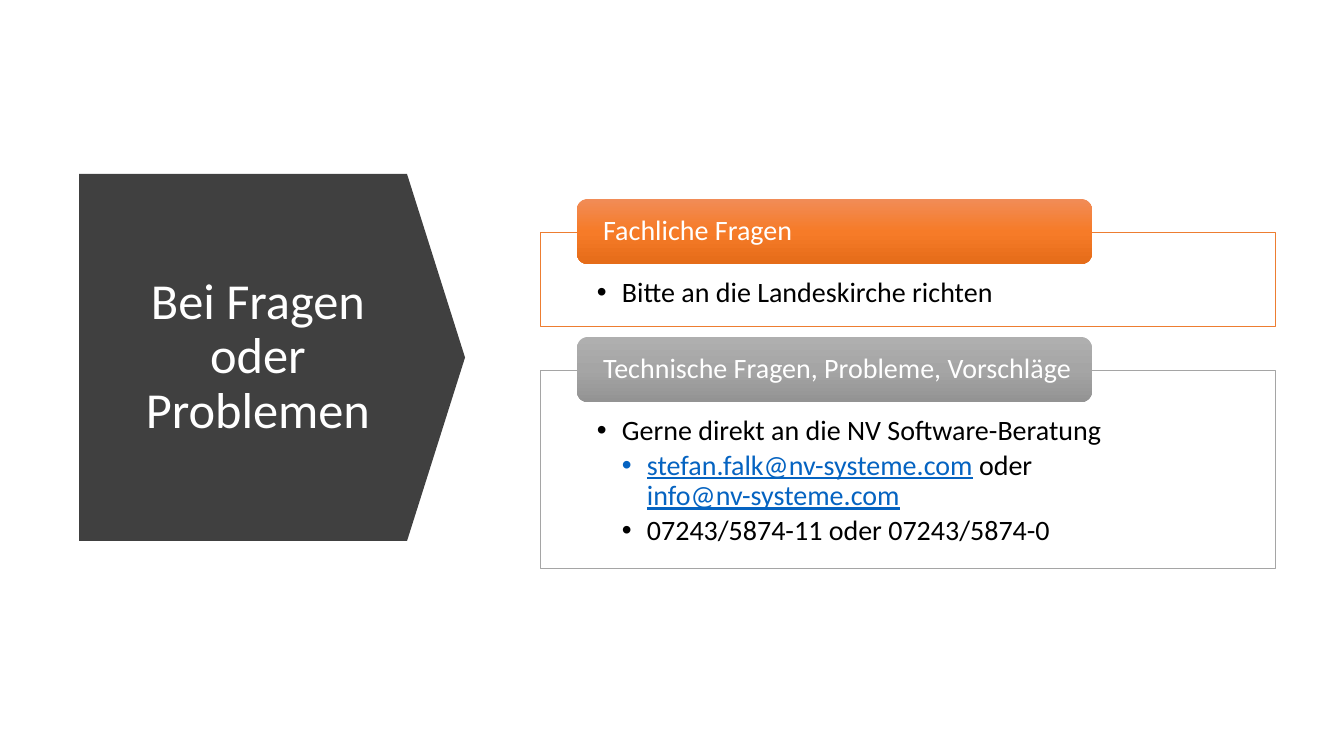
import copy

import pptx
import pptx.dml.color
import pptx.enum.shapes
import pptx.enum.text
import pptx.oxml.ns
import pptx.util
from lxml import etree

HEADING = "Bei Fragen oder Problemen"
# Each bullet is (level, runs); a run is (text, colour role).
TOPICS = [
    {
        "label": "Fachliche Fragen",
        "accent": "orange",
        "height": 94,
        "bullets": [(0, [("Bitte an die Landeskirche richten", "text")])],
    },
    {
        "label": "Technische Fragen, Probleme, Vorschläge",
        "accent": "grey",
        "height": 198,
        "bullets": [
            (0, [("Gerne direkt an die NV Software-Beratung", "text")]),
            (1, [("stefan.falk@nv-systeme.com", "link"), (" oder\n", "text"),
                 ("info@nv-systeme.com", "link")]),
            (1, [("07243/5874-11 oder 07243/5874-0", "text")]),
        ],
    },
]
THEME = {
    "font": "Calibri",
    "title_size": 36,
    "body_size": 20,
    "colors": {"text": "000000", "link": "0563C1", "light": "FFFFFF", "dark": "404040"},
    "lines": {"orange": "ED7D31", "grey": "A5A5A5"},
    "gradients": {
        "orange": ("F18C57", "F67B28", "E56C19"),
        "grey": ("AFAFAF", "A5A5A5", "939393"),
    },
}

EMU_PER_PX = 914400 / 100.8
SLIDE_SIZE = (1344, 756)
ARROW_BOX = (79, 174, 386, 367)
TITLE_BOX = (113, 217, 290, 281)
FRAME_LEFT, FRAME_WIDTH = 540, 735
TAB_LEFT, TAB_WIDTH, TAB_HEIGHT = 577, 515, 65
FIRST_TAB_TOP, TAB_RISE, TOPIC_GAP = 199, 33, 11
INDENT = 25


def px(length):
    return pptx.util.Emu(round(length * EMU_PER_PX))


def rgb(code):
    return pptx.dml.color.RGBColor.from_string(code)


def place(shape, left, top, width, height):
    shape.left, shape.top = px(left), px(top)
    shape.width, shape.height = px(width), px(height)


def write(shape, paragraphs, size=THEME["body_size"], align="LEFT", anchor="MIDDLE",
          margins=(10, 5, 10, 5), bullets=False, space_after=0):
    """Fill a shape with (level, runs) paragraphs; margins are left, top, right, bottom."""
    frame = shape.text_frame
    frame.word_wrap = True
    frame.auto_size = pptx.enum.text.MSO_AUTO_SIZE.NONE
    frame.vertical_anchor = pptx.enum.text.MSO_ANCHOR[anchor]
    (frame.margin_left, frame.margin_top,
     frame.margin_right, frame.margin_bottom) = map(px, margins)
    for index, (level, runs) in enumerate(paragraphs):
        paragraph = frame.add_paragraph() if index else frame.paragraphs[0]
        paragraph.alignment = pptx.enum.text.PP_ALIGN[align]
        paragraph.level = level
        paragraph.line_spacing = 0.9
        paragraph.space_before = pptx.util.Pt(0)
        paragraph.space_after = pptx.util.Pt(space_after)
        if bullets:
            properties = paragraph._p.get_or_add_pPr()
            properties.set("marL", str(px(INDENT * (level + 1))))
            properties.set("indent", str(px(-INDENT)))
            etree.SubElement(properties, pptx.oxml.ns.qn("a:buChar"), char="•")
        for text, role in runs:
            run = paragraph.add_run()
            run.text = text.rstrip("\n")
            run.font.name = THEME["font"]
            run.font.size = pptx.util.Pt(size)
            run.font.color.rgb = rgb(THEME["colors"][role])
            if role == "link":
                run.font.underline = True
            if text.endswith("\n"):
                paragraph.add_line_break()


def add_plain_shape(slide, kind, box):
    shape = slide.shapes.add_shape(
        pptx.enum.shapes.MSO_SHAPE[kind], *map(px, box))
    shape.shadow.inherit = False
    shape.line.fill.background()
    return shape


def fill_gradient(shape, colors):
    """Fill from top to bottom with evenly spaced colours."""
    shape.fill.gradient()
    shape.fill.gradient_angle = 270
    stop_list = shape.element.find(".//" + pptx.oxml.ns.qn("a:gsLst"))
    while len(stop_list) < len(colors):
        stop_list.append(copy.deepcopy(stop_list[0]))
    for index, (stop, color) in enumerate(zip(shape.fill.gradient_stops, colors)):
        stop.color.rgb = rgb(color)
        stop.position = index / (len(colors) - 1)


def add_topic(slide, details, topic, tab_top):
    """Format the details placeholder, add its tab and return the frame's bottom."""
    frame_top = tab_top + TAB_RISE
    place(details, FRAME_LEFT, frame_top, FRAME_WIDTH, topic["height"])
    details.fill.solid()
    details.fill.fore_color.rgb = rgb(THEME["colors"]["light"])
    details.line.color.rgb = rgb(THEME["lines"][topic["accent"]])
    details.line.width = pptx.util.Pt(0.5)
    write(details, topic["bullets"], anchor="TOP", margins=(57, 46, 57, 16),
          bullets=True, space_after=3.5)

    tab = add_plain_shape(slide, "ROUNDED_RECTANGLE",
                          (TAB_LEFT, tab_top, TAB_WIDTH, TAB_HEIGHT))
    fill_gradient(tab, THEME["gradients"][topic["accent"]])
    write(tab, [(0, [(topic["label"], "light")])], margins=(23, 0, 10, 0))
    return frame_top + topic["height"]


def main():
    deck = pptx.Presentation()
    deck.slide_width, deck.slide_height = map(px, SLIDE_SIZE)
    two_content = deck.slide_layouts[3]
    slide = deck.slides.add_slide(two_content)

    arrow = add_plain_shape(slide, "PENTAGON", ARROW_BOX)
    arrow.adjustments[0] = 0.158
    arrow.fill.solid()
    arrow.fill.fore_color.rgb = rgb(THEME["colors"]["dark"])

    title = slide.shapes.title
    place(title, *TITLE_BOX)
    write(title, [(0, [(HEADING, "light")])], size=THEME["title_size"], align="CENTER")
    arrow.element.addnext(title.element)

    tab_top = FIRST_TAB_TOP
    for number, topic in enumerate(TOPICS, start=1):
        frame_bottom = add_topic(slide, slide.placeholders[number], topic, tab_top)
        tab_top = frame_bottom + TOPIC_GAP

    deck.save("out.pptx")


if __name__ == "__main__":
    main()
